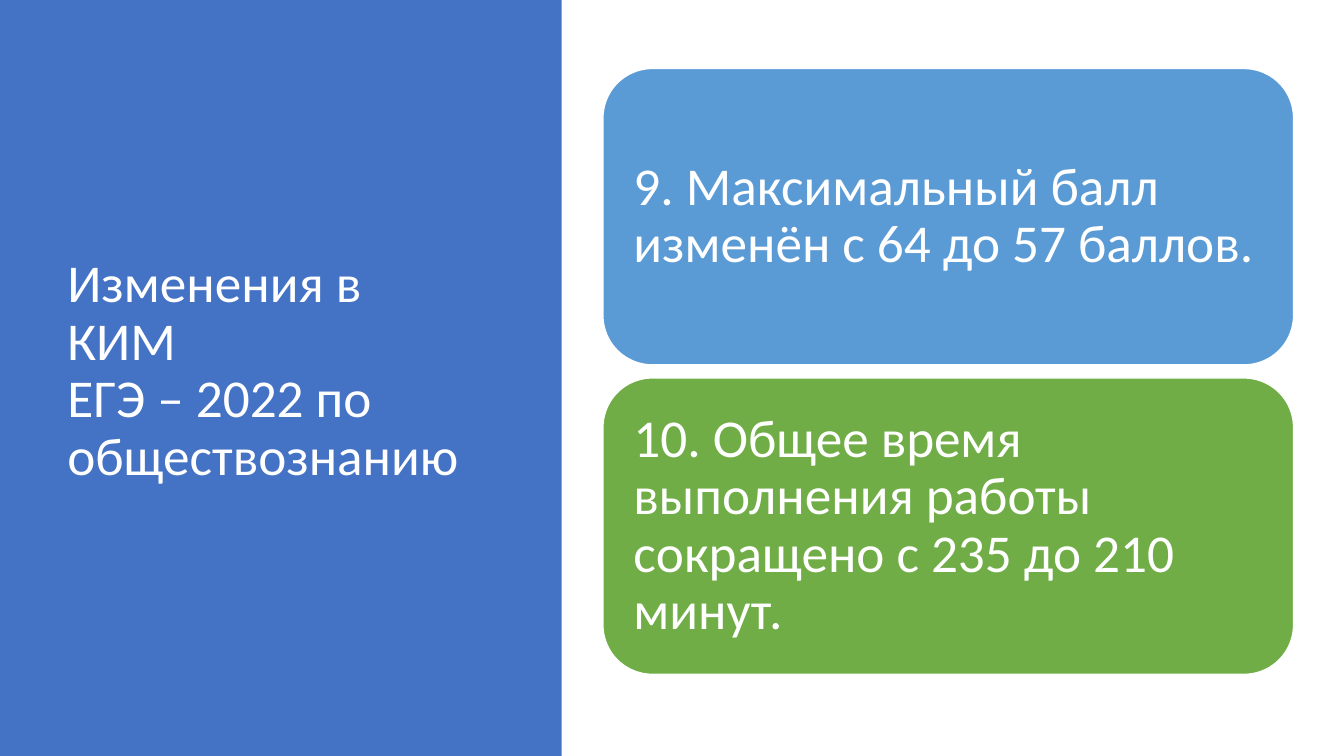
from dataclasses import dataclass

from pptx import Presentation
from pptx.dml.color import RGBColor
from pptx.enum.shapes import MSO_SHAPE
from pptx.enum.text import MSO_ANCHOR, PP_ALIGN
from pptx.util import Inches, Pt


@dataclass(frozen=True)
class Theme:
    font: str = "Calibri"
    size: int = 38
    white: str = "FFFFFF"
    panel: str = "4472C4"
    score: str = "5B9BD5"
    duration: str = "70AD47"


THEME = Theme()
CHANGES = [
    ("9. Максимальный балл изменён с 64 до 57 баллов.", THEME.score),
    ("10. Общее время выполнения работы сокращено с 235 до 210 минут.", THEME.duration),
]
CARD_LEFT, CARD_TOP = 5.98, 0.68
CARD_WIDTH, CARD_HEIGHT = 6.85, 2.94
CARD_PITCH = 3.07


def write_text(frame, wording, side_inset, end_inset):
    frame.text = wording
    frame.word_wrap = True
    frame.vertical_anchor = MSO_ANCHOR.MIDDLE
    frame.margin_left = frame.margin_right = Inches(side_inset)
    frame.margin_top = frame.margin_bottom = Inches(end_inset)
    for paragraph in frame.paragraphs:
        paragraph.alignment = PP_ALIGN.LEFT
        paragraph.line_spacing = 0.9
        for run in paragraph.runs:
            run.font.name = THEME.font
            run.font.size = Pt(THEME.size)
            run.font.color.rgb = RGBColor.from_string(THEME.white)


def add_block(slide, preset, left, top, width, height, color):
    block = slide.shapes.add_shape(
        preset, Inches(left), Inches(top), Inches(width), Inches(height)
    )
    block.shadow.inherit = False
    block.fill.solid()
    block.fill.fore_color.rgb = RGBColor.from_string(color)
    block.line.fill.background()
    return block


def add_title(slide, wording):
    title = slide.shapes.add_textbox(
        Inches(0.57), Inches(0.68), Inches(4.16), Inches(6.02)
    )
    write_text(title.text_frame, wording, 0.1, 0.05)


def add_change_card(slide, top, wording, color):
    card = add_block(
        slide, MSO_SHAPE.ROUNDED_RECTANGLE,
        CARD_LEFT, top, CARD_WIDTH, CARD_HEIGHT, color,
    )
    card.line.color.rgb = RGBColor.from_string(THEME.white)
    card.line.width = Pt(1)
    write_text(card.text_frame, wording, 0.16, 0.16)


def main():
    presentation = Presentation()
    presentation.slide_width = Inches(13.33)
    presentation.slide_height = Inches(7.5)
    slide = presentation.slides.add_slide(presentation.slide_layouts[6])

    add_block(slide, MSO_SHAPE.RECTANGLE, 0, 0, 5.57, 7.5, THEME.panel)
    add_title(slide, "Изменения в КИМ\vЕГЭ – 2022 по обществознанию")
    for index, (wording, color) in enumerate(CHANGES):
        add_change_card(slide, CARD_TOP + index * CARD_PITCH, wording, color)

    presentation.save("out.pptx")


if __name__ == "__main__":
    main()
